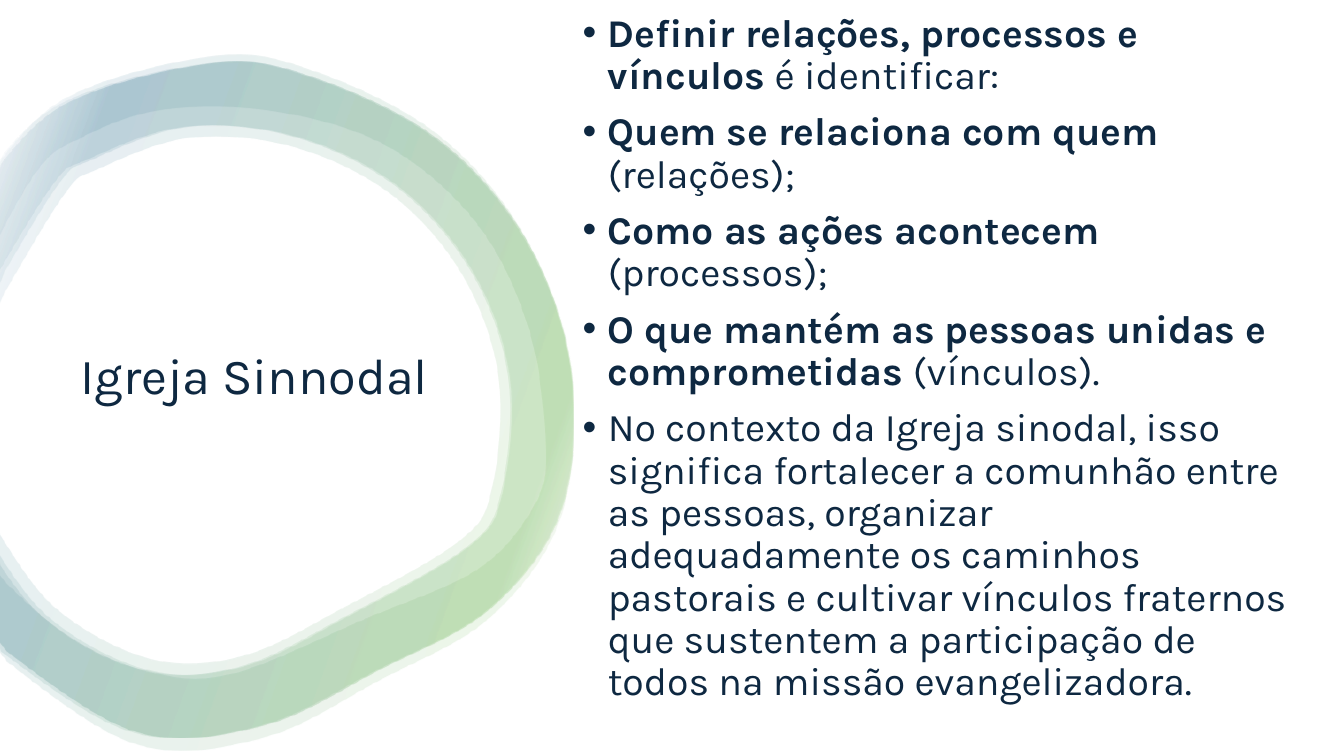
from lxml.etree import SubElement
from pptx import Presentation
from pptx.dml.color import RGBColor
from pptx.enum.shapes import MSO_SHAPE as Shape
from pptx.enum.text import MSO_ANCHOR as Anchor
from pptx.oxml.ns import qn
from pptx.util import Inches, Pt

WIDTH, HEIGHT = Inches(13.33), Inches(7.5)
FONT, NAVY, WHITE = "Karla", "0E2841", "FFFFFF"

TITLE = "Igreja Sinnodal"
# (bold part, regular part)
BULLETS = [
    ("Definir relações, processos e vínculos", " é identificar:"),
    ("Quem se relaciona com quem ", "(relações);"),
    ("Como as ações acontecem ", "(processos);"),
    ("O que mantém as pessoas unidas e comprometidas ", "(vínculos)."),
    ("", "No contexto da Igreja sinodal, isso significa fortalecer a comunhão "
         "entre as pessoas, organizar adequadamente os caminhos pastorais e "
         "cultivar vínculos fraternos que sustentem a participação de todos "
         "na missão evangelizadora."),
]

# Left, top, width, height in percent of the slide
TITLE_AREA = (5.25, 18.13, 31.66, 63.73)
BODY_AREA = (42.61, 4.27, 53.86, 92)

# Ring bands: (position %, colour), all equally transparent
RING_STOPS = [(2, WHITE), (16, "4EA72E"), (85, "156082"), (100, WHITE)]
RING_ALPHA, RING_ANGLE = 10, 200

# Ring curves on a grid of 100 cells per inch, cut off at the left edge
CELL, LEFT_EDGE, CURVE_STEPS = Inches(0.01), -2, 8
RIM = [(-20, 190), (62, 105), (211, 63), (310, 77), (433, 138), (520, 237), (565, 365),
       (556, 504), (486, 602), (376, 663), (259, 719), (129, 723), (-20, 625)]
HOLE = [(-20, 518), (46, 609), (145, 663), (241, 660), (345, 610), (463, 542), (497, 488),
        (504, 373), (467, 268), (394, 185), (294, 136), (187, 126), (93, 158), (56, 186),
        (-20, 313)]
WIDE_HOLE = [(-20, 552), (64, 628), (145, 665), (229, 668), (362, 613), (473, 564),
             (528, 502), (540, 444), (524, 328), (473, 223), (385, 146), (275, 111),
             (161, 109), (80, 137), (36, 171), (-20, 272)]


def color(code):
    return RGBColor.from_string(code)


def scale(points, center, across, down):
    (cx, cy) = center
    return [(cx + (x - cx) * across, cy + (y - cy) * down) for x, y in points]


def smooth(points):
    """Pass a Catmull-Rom curve through the points."""
    padded = [points[0], *points, points[-1]]
    curve = []
    for a, b, c, d in zip(padded, padded[1:], padded[2:], padded[3:]):
        for index in range(CURVE_STEPS):
            t = index / CURVE_STEPS
            curve.append(tuple(
                q + t / 2 * (r - p + t * (2 * p - 5 * q + 4 * r - s
                                          + t * (3 * (q - r) + s - p)))
                for p, q, r, s in zip(a, b, c, d)))
    return curve + [points[-1]]


def ring_bands():
    """Pair each outer curve with its hole, from back to front."""
    right_side, middle = (580, 300), (230, 395)
    return [
        (scale(RIM, right_side, 1, 1.03), WIDE_HOLE),
        (scale(RIM, right_side, 1.01, 1), scale(HOLE, right_side, 1.01, 1)),
        (RIM, scale(HOLE, middle, 0.96, 0.96)),
        (RIM, HOLE),
    ]


def fill_with_fade(band):
    band.fill.gradient()
    gradient = band.fill._xPr.find(qn("a:gradFill"))
    for child in list(gradient):
        gradient.remove(child)
    stops = SubElement(gradient, qn("a:gsLst"))
    for position, code in RING_STOPS:
        stop = SubElement(stops, qn("a:gs"), pos=str(position * 1000))
        tint = SubElement(stop, qn("a:srgbClr"), val=code)
        SubElement(tint, qn("a:alpha"), val=str(RING_ALPHA * 1000))
    SubElement(gradient, qn("a:lin"), ang=str(RING_ANGLE * 60000), scaled="0")


def add_ring(slide):
    ring = slide.shapes.add_group_shape()
    for outer, hole in ring_bands():
        start, *rest = [(max(x, LEFT_EDGE) * CELL, y * CELL)
                        for x, y in smooth(outer) + smooth(hole)]
        builder = ring.shapes.build_freeform(*start, scale=1.0)
        builder.add_line_segments(rest, close=True)
        band = builder.convert_to_shape()
        band.shadow.inherit = False
        band.line.fill.background()
        fill_with_fade(band)


def add_text_frame(slide, area):
    left, top, width, height = area
    box = slide.shapes.add_textbox(int(WIDTH * left / 100), int(HEIGHT * top / 100),
                                   int(WIDTH * width / 100), int(HEIGHT * height / 100))
    frame = box.text_frame
    frame.word_wrap = True
    frame.vertical_anchor = Anchor.MIDDLE
    return frame


def add_span(para, text, size, bold=False):
    span = para.add_run()
    span.text = text
    span.font.name, span.font.size, span.font.bold = FONT, Pt(size), bold
    span.font.color.rgb = color(NAVY)


def add_bullets(frame):
    for index, (bold_part, regular_part) in enumerate(BULLETS):
        para = frame.add_paragraph() if index else frame.paragraphs[0]
        settings = para._p.get_or_add_pPr()
        settings.set("marL", str(Inches(0.25)))
        settings.set("indent", str(-Inches(0.25)))
        SubElement(settings, qn("a:buFont"), typeface="Arial")
        SubElement(settings, qn("a:buChar"), char="•")
        para.line_spacing = 0.9
        para.space_before = Pt(10 if index else 0)
        if bold_part:
            add_span(para, bold_part, 28, bold=True)
        add_span(para, regular_part, 28)


def main():
    deck = Presentation()
    deck.slide_width, deck.slide_height = WIDTH, HEIGHT
    slide = deck.slides.add_slide(deck.slide_layouts[6])

    backdrop = slide.shapes.add_shape(Shape.RECTANGLE, 0, 0, WIDTH, HEIGHT)
    backdrop.shadow.inherit = False
    backdrop.fill.solid()
    backdrop.fill.fore_color.rgb = color(WHITE)
    backdrop.line.fill.background()

    add_ring(slide)

    heading = add_text_frame(slide, TITLE_AREA).paragraphs[0]
    heading.line_spacing = 0.9
    add_span(heading, TITLE, 36)

    body = add_text_frame(slide, BODY_AREA)
    body.margin_bottom = Inches(0.47)
    add_bullets(body)

    deck.save("out.pptx")


if __name__ == "__main__":
    main()
